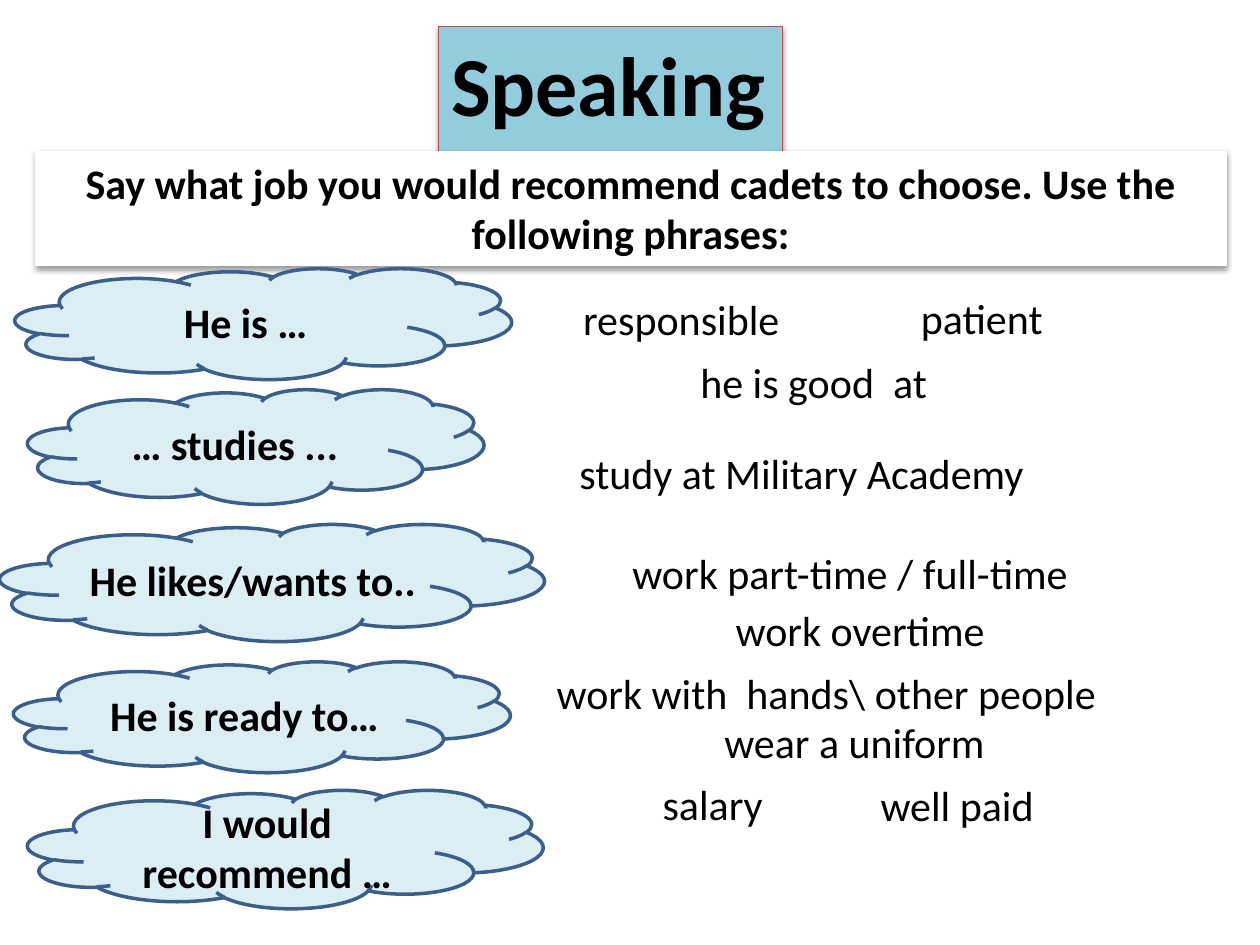
from dataclasses import dataclass

from lxml import etree
from pptx import Presentation
from pptx.dml.color import RGBColor
from pptx.enum.shapes import MSO_SHAPE
from pptx.enum.text import MSO_ANCHOR, MSO_AUTO_SIZE, PP_ALIGN
from pptx.oxml.ns import qn
from pptx.util import Inches, Pt

CLOUD = MSO_SHAPE.CLOUD
RECTANGLE = MSO_SHAPE.RECTANGLE
TOP = MSO_ANCHOR.TOP
MIDDLE = MSO_ANCHOR.MIDDLE
LEFT = PP_ALIGN.LEFT
CENTER = PP_ALIGN.CENTER
FIT_TEXT = MSO_AUTO_SIZE.SHAPE_TO_FIT_TEXT
FIXED_SIZE = MSO_AUTO_SIZE.NONE
TITLE_ONLY = 5


@dataclass(frozen=True)
class Theme:
    font: str = "Calibri"
    ink: str = "000000"
    title_fill: str = "93CDDD"
    title_line: str = "BF4C48"
    paper: str = "FFFFFF"
    cloud_fill: str = "DBEEF4"
    cloud_line: str = "3A5F8C"
    title_size: int = 48
    body_size: int = 24
    thin: float = 0.75
    thick: float = 2


@dataclass(frozen=True)
class Phrase:
    text: str
    left: float
    top: float
    width: float
    height: float = 0.5
    wrap: bool = False


THEME = Theme()

TITLE = Phrase("Speaking", 3.48, 0.21, 2.73, 0.91)
TASK = Phrase(
    "Say what job you would recommend cadets to choose. Use the following phrases:",
    0.28, 1.2, 9.45, 0.91, True,
)
OPENINGS = (
    Phrase("I would recommend …", 0.22, 6.27, 4.09, 0.94, True),
    Phrase("He likes/wants to..", 0, 4.16, 4.32, 0.93, True),
    Phrase("He is …", 0.12, 2.13, 3.94, 0.88, True),
    Phrase("… studies ... ", 0.22, 3.09, 3.62, 0.91, True),
    Phrase("He is ready to…", 0.11, 5.25, 3.94, 0.88, True),
)
ENDINGS = (
    Phrase("responsible", 4.53, 2.28, 1.87),
    Phrase("patient", 7.21, 2.27, 1.24),
    Phrase("he is good  at", 5.46, 2.78, 2.06, 0.81),
    Phrase("study at Military Academy", 4.5, 3.5, 3.76),
    Phrase("work part-time / full-time", 4.92, 4.3, 4.25, wrap=True),
    Phrase("work overtime", 5.74, 4.75, 2.29),
    Phrase("work with  hands\\ other people", 4.32, 5.25, 5.25, wrap=True),
    Phrase("wear a uniform", 5.65, 5.64, 2.38),
    Phrase("salary", 5.16, 6.13, 1.05),
    Phrase("well paid", 6.89, 6.14, 1.51),
)


def bounds(phrase: Phrase) -> tuple:
    return tuple(
        Inches(length)
        for length in (phrase.left, phrase.top, phrase.width, phrase.height)
    )


def apply(target, values: dict) -> None:
    for name, value in values.items():
        setattr(target, name, value)


def write(shape, phrase: Phrase, size: int, bold: bool, align, anchor, fit) -> None:
    frame = shape.text_frame
    apply(frame, {"word_wrap": phrase.wrap, "auto_size": fit, "vertical_anchor": anchor})
    paragraph = frame.paragraphs[0]
    paragraph.alignment = align
    run = paragraph.add_run()
    run.text = phrase.text
    apply(run.font, {"name": THEME.font, "size": Pt(size), "bold": bold})
    run.font.color.rgb = RGBColor.from_string(THEME.ink)


def paint(shape, fill: str, line: str, weight: float) -> None:
    shape.fill.solid()
    shape.fill.fore_color.rgb = RGBColor.from_string(fill)
    shape.line.color.rgb = RGBColor.from_string(line)
    shape.line.width = Pt(weight)


def cast_shadow(shape) -> None:
    effects = etree.SubElement(shape._element.spPr, qn("a:effectLst"))
    shadow = etree.SubElement(
        effects, qn("a:outerShdw"),
        blurRad=str(Pt(3.1)), dist=str(Pt(1.6)), dir="5400000", rotWithShape="0",
    )
    color = etree.SubElement(shadow, qn("a:srgbClr"), val=THEME.ink)
    etree.SubElement(color, qn("a:alpha"), val="38000")


def draw_banner(shape, phrase: Phrase, fill: str, line: str, size: int, align) -> None:
    paint(shape, fill, line, THEME.thin)
    cast_shadow(shape)
    write(shape, phrase, size, True, align, TOP, FIT_TEXT)


def draw_opening(slide, phrase: Phrase) -> None:
    cloud = slide.shapes.add_shape(CLOUD, *bounds(phrase))
    cloud.shadow.inherit = False
    paint(cloud, THEME.cloud_fill, THEME.cloud_line, THEME.thick)
    write(cloud, phrase, THEME.body_size, True, CENTER, MIDDLE, FIXED_SIZE)


def draw_ending(slide, phrase: Phrase) -> None:
    box = slide.shapes.add_textbox(*bounds(phrase))
    write(box, phrase, THEME.body_size, False, LEFT, TOP, FIT_TEXT)


def main() -> None:
    deck = Presentation()
    apply(deck, {"slide_width": Inches(10), "slide_height": Inches(7.5)})
    slide = deck.slides.add_slide(deck.slide_layouts[TITLE_ONLY])

    title = slide.shapes.title
    apply(title, dict(zip(("left", "top", "width", "height"), bounds(TITLE))))
    draw_banner(title, TITLE, THEME.title_fill, THEME.title_line, THEME.title_size, LEFT)

    task = slide.shapes.add_shape(RECTANGLE, *bounds(TASK))
    draw_banner(task, TASK, THEME.paper, THEME.paper, THEME.body_size, CENTER)

    for opening in OPENINGS:
        draw_opening(slide, opening)
    for ending in ENDINGS:
        draw_ending(slide, ending)

    deck.save("out.pptx")


if __name__ == "__main__":
    main()
